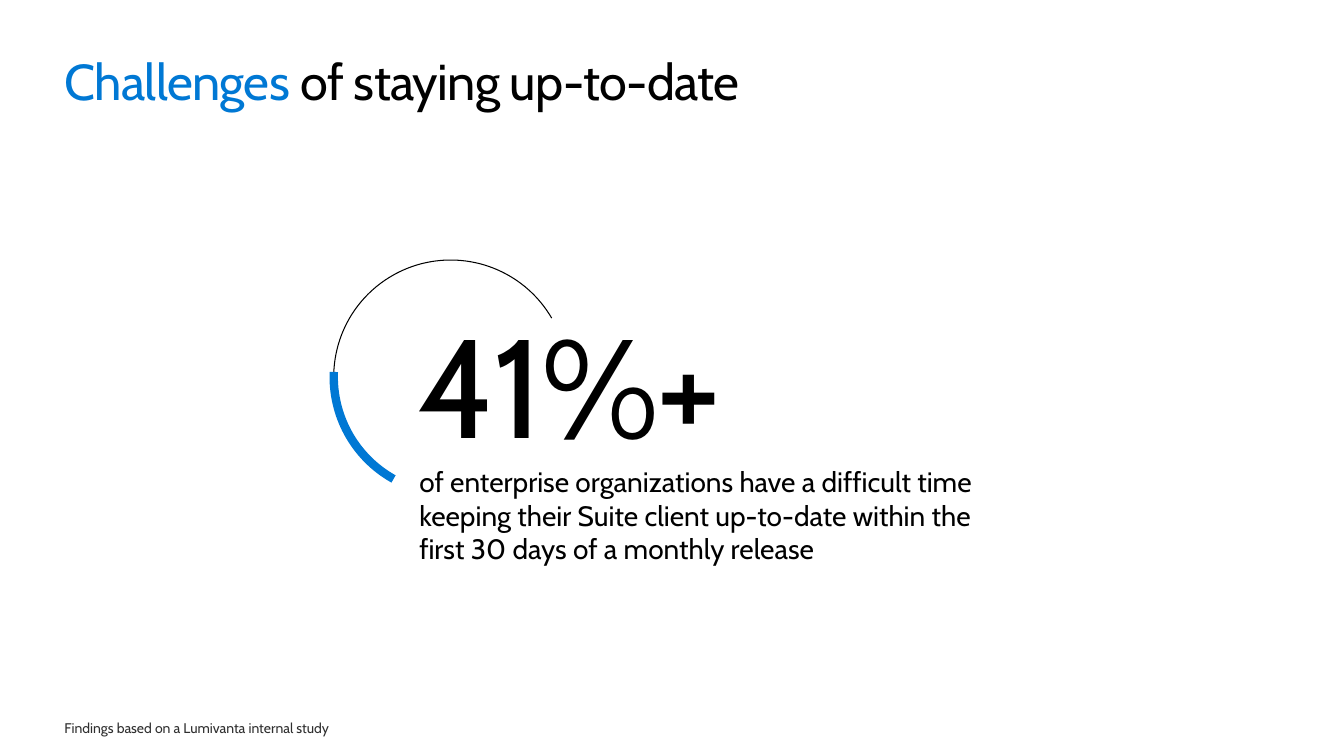
from pptx import Presentation
from pptx.dml.color import RGBColor
from pptx.enum.shapes import MSO_SHAPE
from pptx.enum.text import MSO_ANCHOR, MSO_AUTO_SIZE
from pptx.util import Inches, Pt

WIDE, HIGH = Inches(13.33), Inches(7.5)
BLACK, BLUE, GREY = "000000", "0078D4", "2F2F2F"
FONT = "Cabin"

RING = (24.83, 34.4, 17.4, 30.93)
ARCS = [
    (120.12, 329.8, BLACK, 0.75),
    (119.22, 182.43, BLUE, 6),
]
TEXTS = [
    dict(at=(4.8, 6.67, 90.4, 8.13), size=36, track=-50,
         runs=[("Challenges", BLUE), (" of staying up-to-date", BLACK)]),
    dict(at=(4.8, 94.53, 62.4, 3.6), size=10, pad=0.05,
         runs=[("Findings based on a Lumivanta internal study", GREY)]),
    dict(at=(31.06, 53.33, 28.06, 9.6), size=100, track=-150,
         anchor=MSO_ANCHOR.MIDDLE, para=dict(line_spacing=Pt(38.3)),
         runs=[("41%+", BLACK)]),
    dict(at=(31.2, 61.47, 43.96, 13.47), size=20, para=dict(space_after=Pt(3.1)),
         runs=[("of enterprise organizations have a difficult time keeping "
                "their Suite client up-to-date within the first 30 days of "
                "a monthly release", BLACK)]),
]


def place(at):
    return [round(part * full / 100) for part, full in zip(at, (WIDE, HIGH) * 2)]


def paint(hue):
    return RGBColor.from_string(hue)


def style(item, values):
    for name, value in values.items():
        setattr(item, name, value)


def draw_arc(slide, start, end, hue, width):
    arc = slide.shapes.add_shape(MSO_SHAPE.ARC, *place(RING))
    arc.shadow.inherit = False
    arc.fill.background()
    for spot, angle in enumerate((start, end)):
        arc.adjustments[spot] = angle * 0.6
    arc.line.color.rgb = paint(hue)
    arc.line.width = Pt(width)


def write(slide, at, size, runs, track=0, pad=0, anchor=MSO_ANCHOR.TOP, para={}):
    frame = slide.shapes.add_textbox(*place(at)).text_frame
    style(frame, dict(word_wrap=True, auto_size=MSO_AUTO_SIZE.SHAPE_TO_FIT_TEXT,
                      vertical_anchor=anchor, margin_left=0, margin_right=0,
                      margin_top=Inches(pad), margin_bottom=Inches(pad)))
    line = frame.paragraphs[0]
    style(line, para)
    for words, hue in runs:
        run = line.add_run()
        run.text = words
        style(run.font, dict(name=FONT, size=Pt(size)))
        run.font.color.rgb = paint(hue)
        if track:
            run.font._element.set("spc", str(track))


def main():
    deck = Presentation()
    style(deck, dict(slide_width=WIDE, slide_height=HIGH))
    slide = deck.slides.add_slide(deck.slide_layouts[6])
    for arc in ARCS:
        draw_arc(slide, *arc)
    for text in TEXTS:
        write(slide, **text)
    deck.save("out.pptx")


if __name__ == "__main__":
    main()
